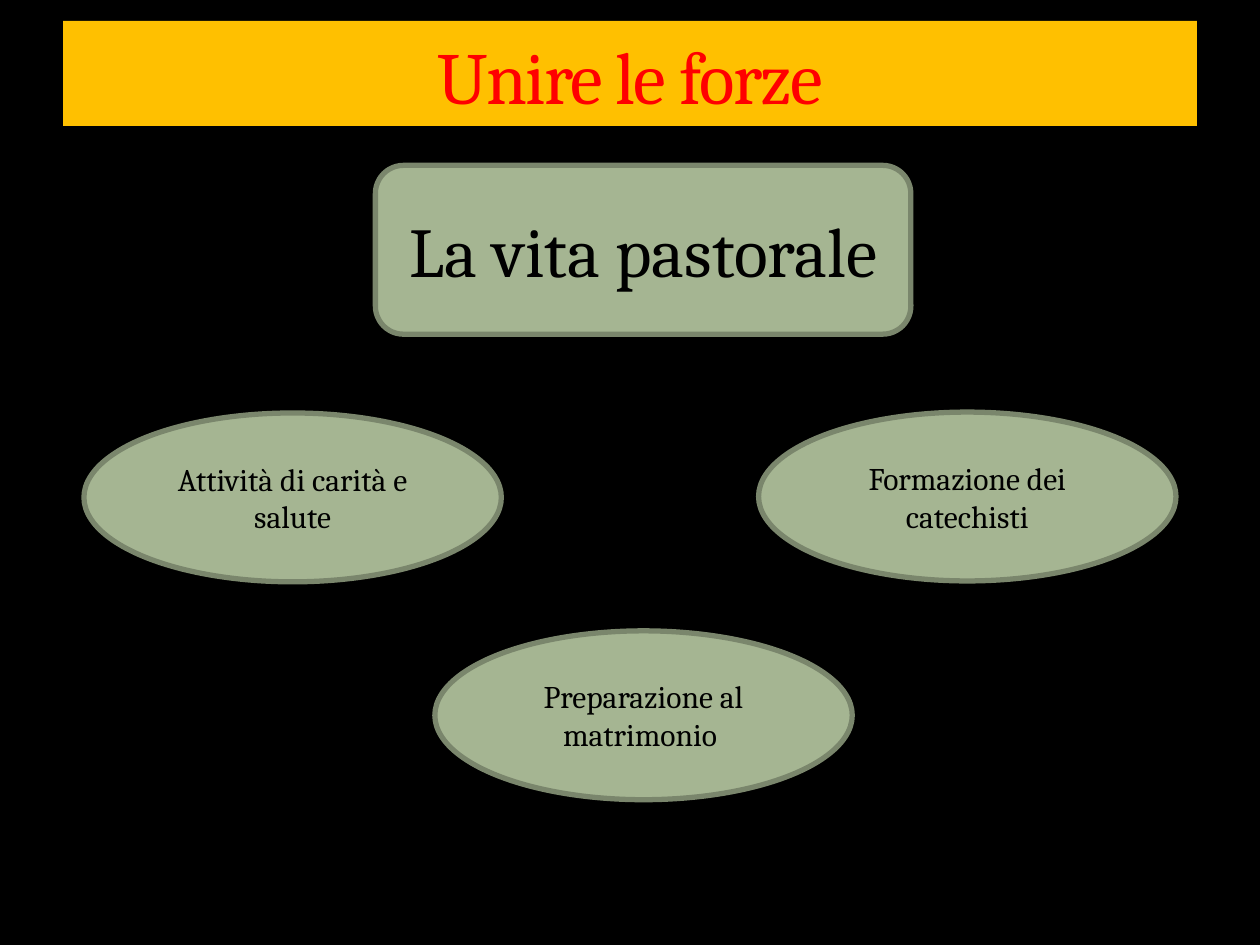
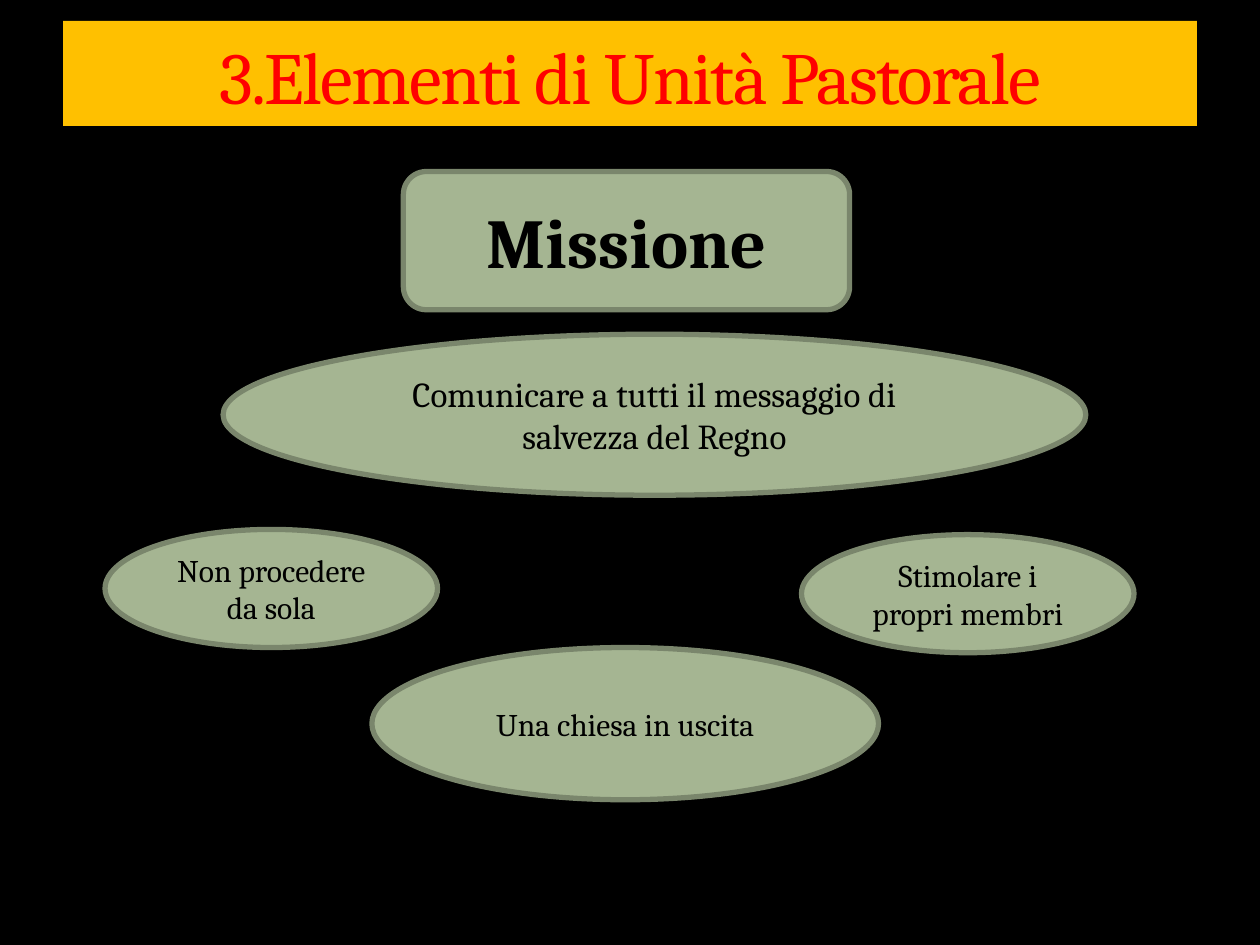
import pptx
import pptx.dml.color
import pptx.enum.shapes
import pptx.enum.text
import pptx.util

Pt = pptx.util.Pt
ANCHOR = pptx.enum.text.MSO_ANCHOR
HEADING = pptx.enum.shapes.MSO_SHAPE.FLOWCHART_ALTERNATE_PROCESS
OVAL = pptx.enum.shapes.MSO_SHAPE.OVAL

# Shared look
BACKGROUND, BAND, TITLE_RED = "000000", "FFC000", "FF0000"
SAGE, SAGE_EDGE, INK = "A5B592", "7A866C", "000000"
TITLE_BAND = (36, 12, 648, 60)


def colour(hex_code):
    return pptx.dml.color.RGBColor.from_string(hex_code)


def write(part, wording, anchor, text_colour, font_format):
    """Put one centred paragraph into a shape."""
    frame = part.text_frame
    frame.word_wrap = True
    frame.auto_size = pptx.enum.text.MSO_AUTO_SIZE.NONE
    frame.vertical_anchor = anchor
    paragraph = frame.paragraphs[0]
    paragraph.alignment = pptx.enum.text.PP_ALIGN.CENTER
    run = paragraph.add_run()
    run.text = wording
    for attribute, value in font_format.items():
        setattr(run.font, attribute, value)
    run.font.color.rgb = colour(text_colour)
    return run


# Content: title, then (outline, wording, box in points, size, bold)
topics = [
    ("Unire le forze", [
        (HEADING, "La vita pastorale", (214.5, 94.5, 306, 96.5), 40, False),
        (OVAL, "Attività di carità e salute", (48, 236, 238.5, 96.5), 18, False),
        (OVAL, "Formazione dei catechisti", (433.5, 235.5, 238.5, 96.5), 18, False),
        (OVAL, "Preparazione al matrimonio ", (248.5, 360.5, 238.5, 96.5), 18, False),
    ]),
    ("3.Elementi di Unità Pastorale", [
        (HEADING, "Missione", (230.5, 98, 255, 79), 40, True),
        (OVAL, "Comunicare a tutti il messaggio di salvezza del Regno",
         (127.5, 191, 493, 92), 20, False),
        (OVAL, "Non procedere da sola", (60, 302.5, 190, 67.5), 18, False),
        (OVAL, "Stimolare i propri membri", (458, 305.5, 190, 67.5), 18, False),
        (OVAL, "Una chiesa in uscita", (212.5, 370, 289.5, 87), 18, False),
    ]),
]

deck = pptx.Presentation()
deck.slide_width, deck.slide_height = Pt(720), Pt(540)
title_only = deck.slide_layouts[5]

for heading, ideas in topics:
    slide = deck.slides.add_slide(title_only)
    slide.background.fill.solid()
    slide.background.fill.fore_color.rgb = colour(BACKGROUND)

    # Title band
    title = slide.shapes.title
    title.left, title.top, title.width, title.height = map(Pt, TITLE_BAND)
    title.fill.solid()
    title.fill.fore_color.rgb = colour(BAND)
    title_run = write(title, heading, ANCHOR.BOTTOM, TITLE_RED,
                      {"name": "Cambria", "size": Pt(42), "bold": False})
    title_run.font._element.set("spc", "-100")  # letters 1 pt closer

    # Theme box and the ideas around it
    for outline, wording, box, size, bold in ideas:
        idea = slide.shapes.add_shape(outline, *map(Pt, box))
        idea.shadow.inherit = False
        idea.fill.solid()
        idea.fill.fore_color.rgb = colour(SAGE)
        idea.line.color.rgb = colour(SAGE_EDGE)
        idea.line.width = Pt(3)
        write(idea, wording, ANCHOR.MIDDLE, INK,
              {"name": "Cambria", "size": Pt(size), "bold": bold})

deck.save("out.pptx")
